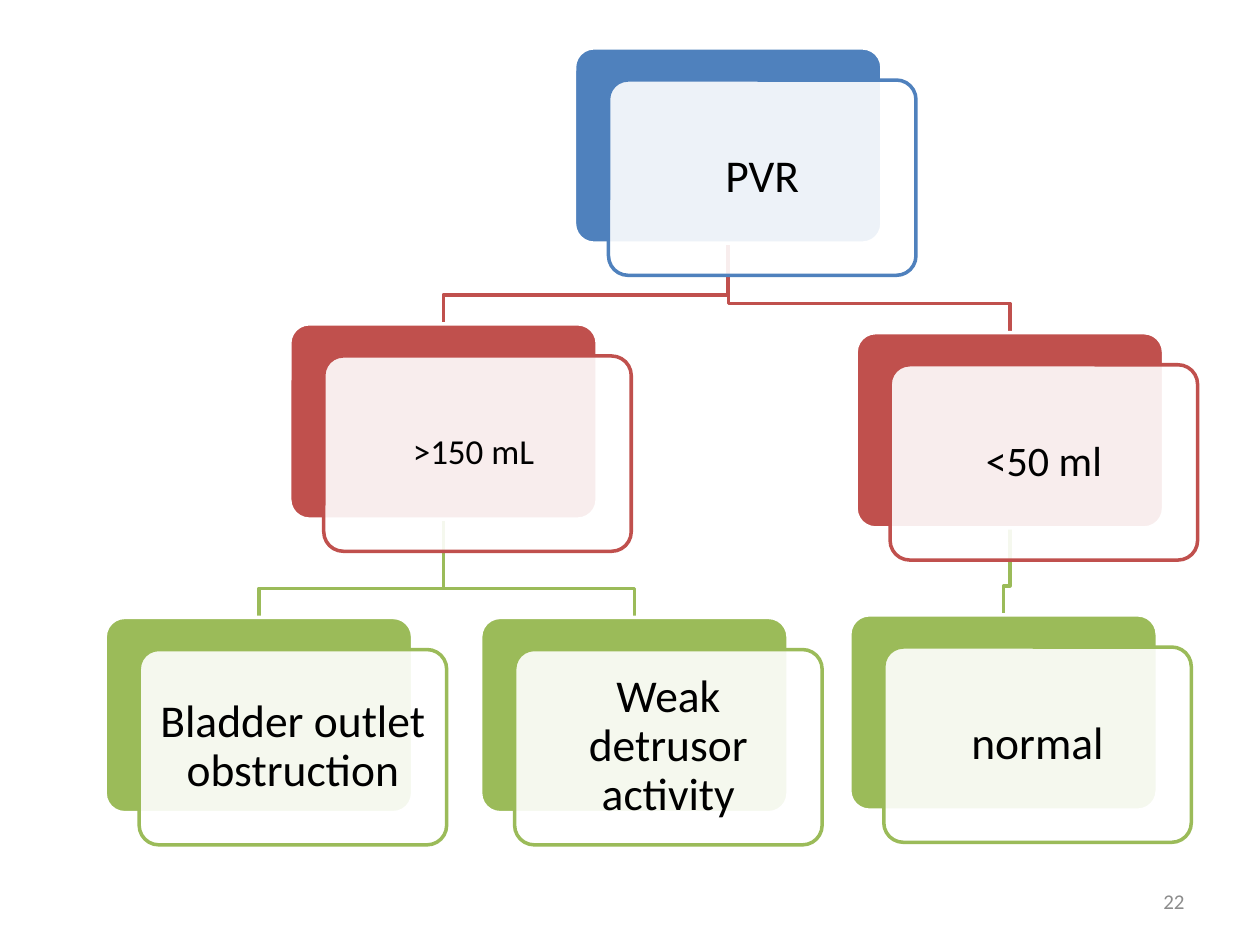
from collections import namedtuple
from dataclasses import dataclass

from lxml import etree
from pptx import Presentation
from pptx import util as u
from pptx.dml.color import RGBColor
from pptx.enum import shapes, text
from pptx.oxml.ns import qn

COLUMNS, ROWS = 100, 75  # square grid cells on a 10 by 7.5 inch slide


@dataclass(frozen=True)
class Theme:
    root: str = "4F81BD"
    volume: str = "C0504D"
    finding: str = "9BBB59"
    paper: str = "FFFFFF"
    ink: str = "000000"
    muted: str = "8C8C8C"
    font: str = "Calibri"
    large: int = 26
    medium: int = 24
    small: int = 20
    footer: int = 12
    line: int = 2
    card_alpha: int = 90


Node = namedtuple("Node", "label color left top size inset parent")


class TreeSlide:
    WIDTH, HEIGHT = 24.4, 15.5  # one card
    SHIFT = (2.7, 2.55)         # front card against back card
    PADDING = 0.45              # text area inside the front card
    BEND = 2.3                  # elbow height above the child

    def __init__(self, deck, theme):
        self.theme = theme
        self.cell = deck.slide_width / COLUMNS
        self.slide = deck.slides.add_slide(deck.slide_layouts[6])

    def grid(self, *cells):
        return [u.Emu(round(cell * self.cell)) for cell in cells]

    def outline(self, shape, color):
        shape.shadow.inherit = False
        shape.line.color.rgb = RGBColor.from_string(color)
        shape.line.width = u.Pt(self.theme.line)

    def elbow(self, parent, child):
        start_x, end_x = (node.left + self.WIDTH / 2 for node in (parent, child))
        start_y, bend_y = parent.top + self.HEIGHT, child.top - self.BEND
        corners = [(start_x, bend_y), (end_x, bend_y), (end_x, child.top)]
        builder = self.slide.shapes.build_freeform(*self.grid(start_x, start_y))
        builder.add_line_segments([self.grid(*corner) for corner in corners], close=False)
        branch = builder.convert_to_shape()
        branch.fill.background()
        self.outline(branch, child.color)

    def card(self, left, top, fill, line, alpha=None):
        card = self.slide.shapes.add_shape(
            shapes.MSO_SHAPE.ROUNDED_RECTANGLE,
            *self.grid(left, top, self.WIDTH, self.HEIGHT))
        card.adjustments[0] = 0.1
        card.fill.solid()
        card.fill.fore_color.rgb = RGBColor.from_string(fill)
        self.outline(card, line)
        if alpha is not None:
            tint = card._element.spPr.find(qn("a:solidFill"))[0]
            etree.SubElement(tint, qn("a:alpha"), val=str(alpha * 1000))

    def words(self, content, area, size, color, align, inset=None, spacing=None):
        frame = self.slide.shapes.add_textbox(*self.grid(*area)).text_frame
        frame_format = {"word_wrap": True, "vertical_anchor": text.MSO_ANCHOR.MIDDLE}
        if inset is not None:
            for side in ("left", "right", "top", "bottom"):
                frame_format[f"margin_{side}"] = self.grid(inset)[0]
        paragraph = frame.paragraphs[0]
        run = paragraph.add_run()
        run.text = content
        run.font.color.rgb = RGBColor.from_string(color)
        formats = (
            (frame, frame_format),
            (paragraph, {"alignment": align, "line_spacing": spacing}),
            (run.font, {"name": self.theme.font, "size": u.Pt(size)}),
        )
        for target, values in formats:
            for name, value in values.items():
                setattr(target, name, value)

    def node(self, node):
        theme = self.theme
        left, top = node.left + self.SHIFT[0], node.top + self.SHIFT[1]
        self.card(node.left, node.top, node.color, theme.paper)
        self.card(left, top, theme.paper, node.color, theme.card_alpha)
        area = (left + self.PADDING, top + self.PADDING,
                self.WIDTH - 2 * self.PADDING, self.HEIGHT - 2 * self.PADDING)
        self.words(node.label, area, node.size, theme.ink,
                   text.PP_ALIGN.CENTER, node.inset, 0.9)


def main():
    theme = Theme()
    deck = Presentation()
    deck.slide_width, deck.slide_height = u.Inches(10), u.Inches(10 * ROWS / COLUMNS)
    tree = TreeSlide(deck, theme)

    # Decision tree, positions in grid cells
    nodes = {
        "pvr": Node("PVR", theme.root, 45.6, 3.8, theme.large, 1.1, None),
        "high": Node(">150 mL ", theme.volume, 23, 25.7, theme.small, 0.8, "pvr"),
        "outlet": Node("Bladder outlet obstruction", theme.finding,
                       8.35, 49, theme.large, 1.1, "high"),
        "detrusor": Node("Weak detrusor activity", theme.finding,
                         38.15, 49, theme.large, 1.1, "high"),
        "low": Node("<50 ml", theme.volume, 67.95, 26.4, theme.medium, 1, "pvr"),
        "normal": Node("normal", theme.finding, 67.45, 48.8, theme.large, 1.1, "low"),
    }

    # Branches lie behind the cards
    for child in reversed(nodes.values()):
        if child.parent:
            tree.elbow(nodes[child.parent], child)
    for node in nodes.values():
        tree.node(node)

    # Slide number
    tree.words("22", (71.7, 69.5, 23.3, 4), theme.footer, theme.muted, text.PP_ALIGN.RIGHT)

    deck.save("out.pptx")


if __name__ == "__main__":
    main()
